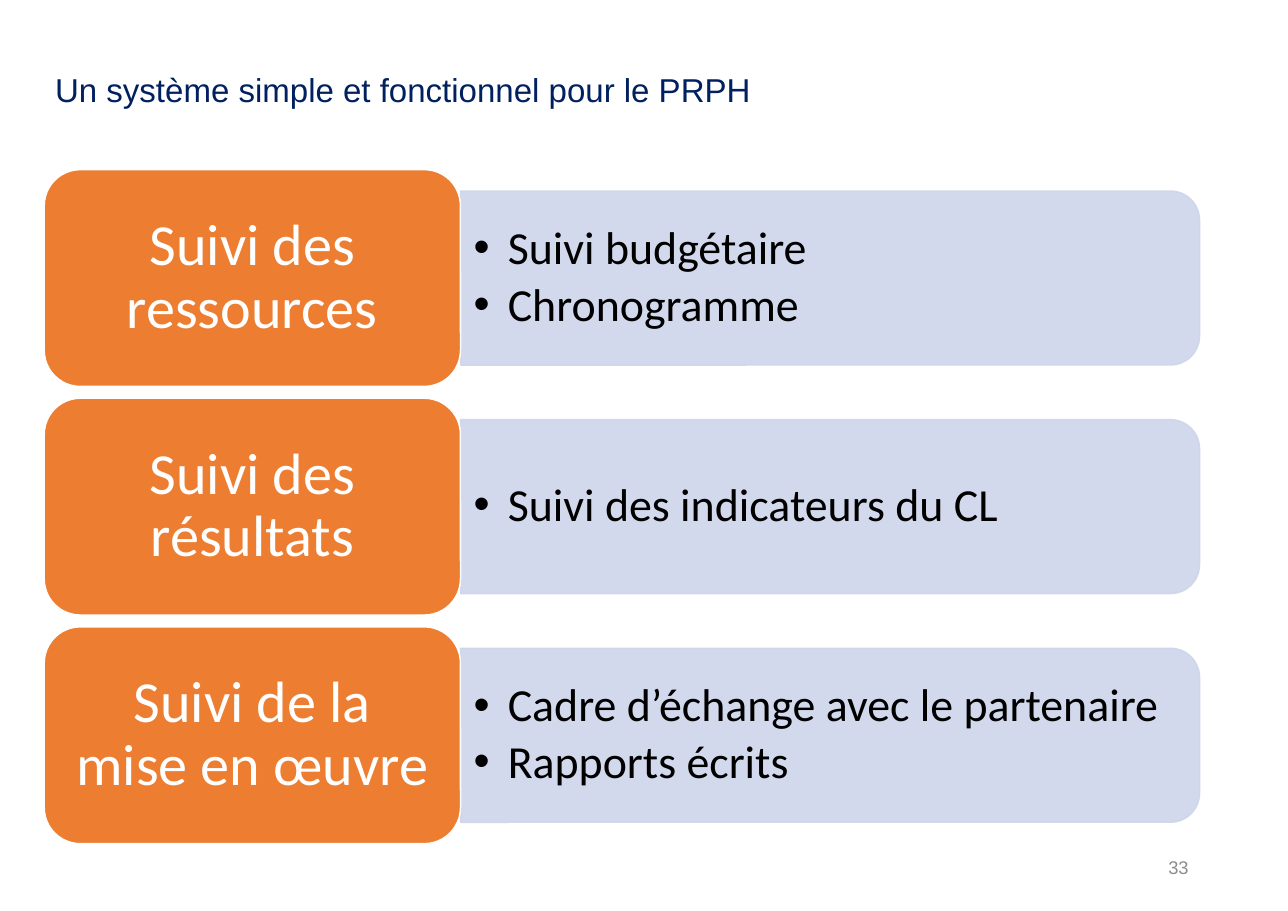
from lxml.etree import SubElement
from pptx import Presentation
from pptx.dml.color import RGBColor as Rgb
from pptx.enum.shapes import MSO_SHAPE as Form
from pptx.enum.text import MSO_ANCHOR as Anchor, PP_ALIGN as Align
from pptx.oxml.ns import qn
from pptx.util import Cm, Pt

TITLE = "Un système simple et fonctionnel pour le PRPH"
PAGE = "33"
ROWS = [
    ("Suivi des ressources", ["Suivi budgétaire", "Chronogramme"]),
    ("Suivi des résultats", ["Suivi des indicateurs du CL"]),
    ("Suivi de la mise en œuvre",
     ["Cadre d’échange avec le partenaire", "Rapports écrits"]),
]
HUES = {"title": "002060", "page": "8C8C8C", "card": "ED7D31",
        "panel": "CFD5EA", "white": "FFFFFF", "black": "000000"}

# Lengths in cm
LEFT, TOP, STEP = 1.02, 3.91, 5.27
CARD_W, CARD_H = 9.6, 5
PANEL_W, PANEL_H = 17.04, 4.01
LIST_W, LIST_H = 16.87, 3.63
INDENT = 0.79


def write(shape, lines, size, hue, font="Calibri", align=Align.LEFT,
          inset=(0.25, 0.13), after=0, bullet=False):
    """Fill a shape with paragraphs; inset is (sides, top and bottom) in cm."""
    frame = shape.text_frame
    frame.word_wrap = True
    frame.vertical_anchor = Anchor.MIDDLE
    frame.margin_left = frame.margin_right = Cm(inset[0])
    frame.margin_top = frame.margin_bottom = Cm(inset[1])
    for i, line in enumerate(lines):
        para = frame.add_paragraph() if i else frame.paragraphs[0]
        para.alignment = align
        para.line_spacing = 0.9
        para.space_after = Pt(after)
        if bullet:
            props = para._p.get_or_add_pPr()
            props.set("marL", str(Cm(INDENT)))
            props.set("indent", str(-Cm(INDENT)))
            SubElement(props, qn("a:buFont"), typeface="Arial")
            SubElement(props, qn("a:buChar"), char="•")
        run = para.add_run()
        run.text = line
        run.font.size = Pt(size)
        run.font.name = font
        run.font.color.rgb = Rgb.from_string(HUES[hue])


def add_box(slide, x, y, w, h):
    return slide.shapes.add_textbox(Cm(x), Cm(y), Cm(w), Cm(h))


def add_form(slide, form, x, y, w, h, fill, line):
    shape = slide.shapes.add_shape(form, Cm(x), Cm(y), Cm(w), Cm(h))
    shape.shadow.inherit = False
    shape.fill.solid()
    shape.fill.fore_color.rgb = Rgb.from_string(HUES[fill])
    shape.line.color.rgb = Rgb.from_string(HUES[line])
    shape.line.width = Pt(1)
    return shape


def add_panel(slide, x, mid):
    """Draw the pale panel, turned so that its round corners face right."""
    panel = add_form(slide, Form.ROUND_2_SAME_RECTANGLE,
                     x + (PANEL_W - PANEL_H) / 2, mid - PANEL_W / 2,
                     PANEL_H, PANEL_W, "panel", "panel")
    panel.rotation = 90
    for tint in panel._element.spPr.iter(qn("a:srgbClr")):
        SubElement(tint, qn("a:alpha"), val="90000")


def add_row(slide, top, head, points):
    mid = top + CARD_H / 2
    side = LEFT + CARD_W
    add_panel(slide, side, mid)
    box = add_box(slide, side, mid - LIST_H / 2, LIST_W, LIST_H)
    write(box, points, 30, "black", inset=(0.3, 0.15), after=4.5, bullet=True)
    card = add_form(slide, Form.ROUNDED_RECTANGLE, LEFT, top, CARD_W, CARD_H,
                    "card", "white")
    write(card, [head], 38, "white", align=Align.CENTER,
          inset=(0.4, 0.2), after=13.3)


def main():
    deck = Presentation()
    deck.slide_width, deck.slide_height = Cm(29.7), Cm(21)
    slide = deck.slides.add_slide(deck.slide_layouts[6])
    write(add_box(slide, LEFT, 1.24, 17.78, 1.75), [TITLE], 21.6, "title",
          font="Arial")
    write(add_box(slide, 20.98, 19.46, 6.68, 1.12), [PAGE], 12, "page",
          font="Arial", align=Align.RIGHT)
    for i, (head, points) in enumerate(ROWS):
        add_row(slide, TOP + i * STEP, head, points)
    deck.save("out.pptx")


if __name__ == "__main__":
    main()
